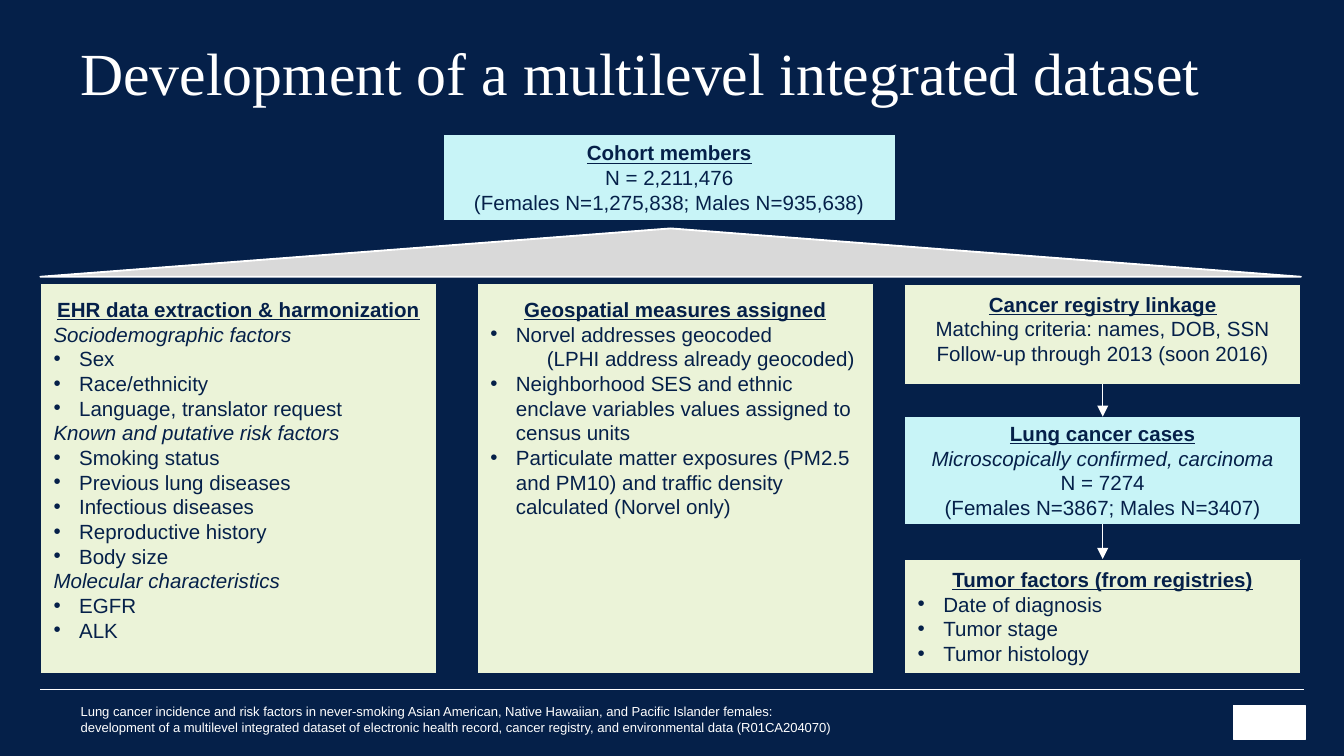
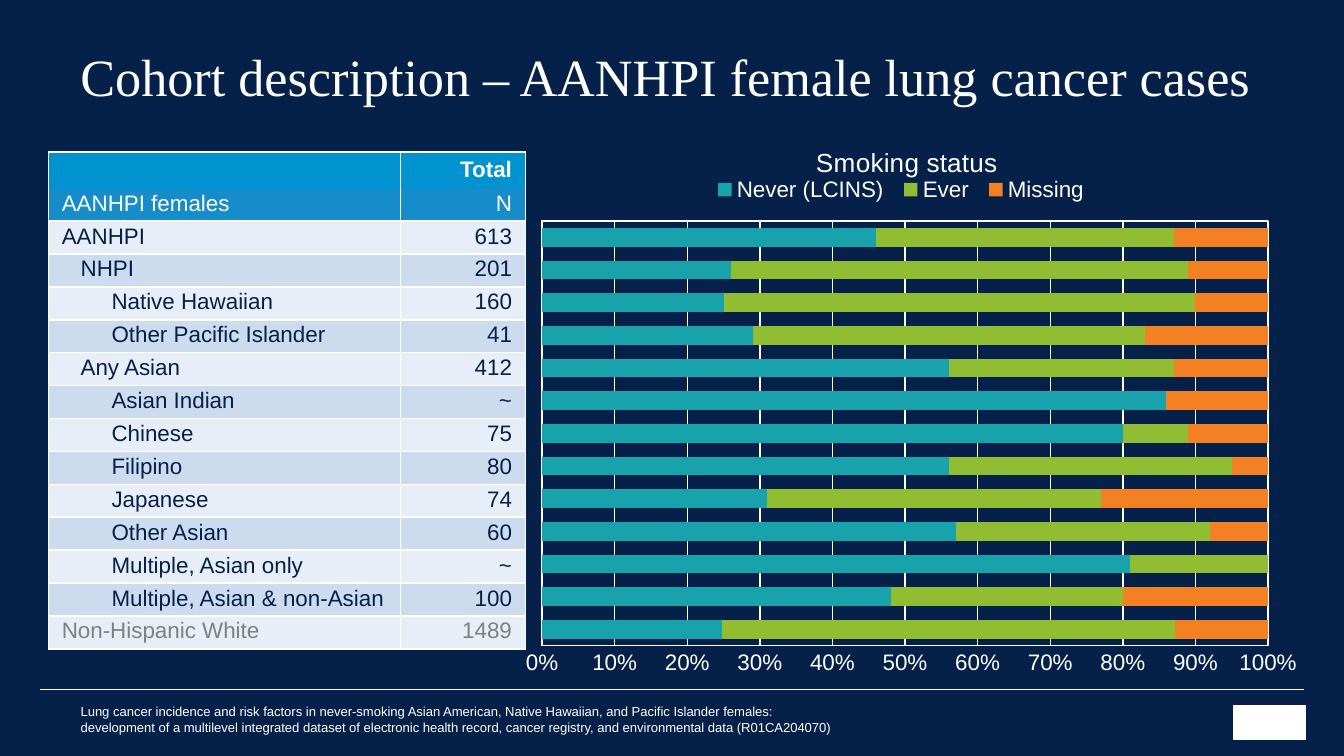
from dataclasses import dataclass, replace
from typing import Any, Optional

from lxml.etree import SubElement
from pptx import Presentation
from pptx.chart.data import CategoryChartData
from pptx.dml.color import RGBColor
from pptx.enum.chart import XL_CHART_TYPE, XL_LEGEND_POSITION, XL_TICK_MARK
from pptx.enum.shapes import MSO_CONNECTOR, MSO_SHAPE
from pptx.enum.text import MSO_ANCHOR, PP_ALIGN
from pptx.oxml import parse_xml
from pptx.oxml.ns import nsdecls, qn
from pptx.util import Inches, Pt

NAVY = RGBColor(0x05, 0x20, 0x49)
WHITE = RGBColor(0xFF, 0xFF, 0xFF)
GRAY = RGBColor(0x80, 0x80, 0x80)
LIGHT_GRAY = RGBColor(0xD9, 0xD9, 0xD9)
PALE_CYAN = RGBColor(0xC8, 0xF4, 0xF7)
PALE_GREEN = RGBColor(0xEB, 0xF3, 0xD8)
HEADER_BLUE = RGBColor(0x00, 0x93, 0xD0)
SUBHEADER_BLUE = RGBColor(0x17, 0x8C, 0xCB)
BANDS = (RGBColor(0xE7, 0xEE, 0xF7), RGBColor(0xCC, 0xDC, 0xEE))
TEAL = RGBColor(0x18, 0xA3, 0xAC)
GREEN = RGBColor(0x90, 0xBD, 0x31)
ORANGE = RGBColor(0xF4, 0x80, 0x24)

SLIDE_WIDTH = Inches(10)
SLIDE_HEIGHT = SLIDE_WIDTH * 9 // 16
FOOTER = (
    "Lung cancer incidence and risk factors in never-smoking Asian American, Native Hawaiian, "
    "and Pacific Islander females: development of a multilevel integrated dataset of electronic "
    "health record, cancer registry, and environmental data (R01CA204070)"
)
BULLET_INDENT = 0.19


@dataclass(frozen=True)
class Line:
    text: str
    size: float = 11
    color: RGBColor = NAVY
    font: str = "Arial"
    bold: bool = False
    italic: bool = False
    underline: bool = False
    align: PP_ALIGN = PP_ALIGN.LEFT
    indent: float = 0
    bullet: bool = False
    spacing: Optional[float] = None


@dataclass(frozen=True)
class Box:
    left: float
    top: float
    width: float
    height: float
    fill: RGBColor
    lines: list[Line]
    anchor: MSO_ANCHOR = MSO_ANCHOR.MIDDLE
    margin_top: float = 0.05


@dataclass(frozen=True)
class Group:
    name: str
    total: str
    indent: float
    smoking: tuple[int, int, int]


def heading(text: str) -> Line:
    return Line(text, bold=True, underline=True, align=PP_ALIGN.CENTER)


def centered(text: str) -> Line:
    return Line(text, align=PP_ALIGN.CENTER)


def subheading(text: str) -> Line:
    return Line(text, italic=True)


def bullets(*texts: str) -> list[Line]:
    return [Line(text, indent=BULLET_INDENT, bullet=True) for text in texts]


COLUMN = {"top": 2.11, "width": 2.95, "height": 2.9, "fill": PALE_GREEN,
          "anchor": MSO_ANCHOR.TOP, "margin_top": 0.1}
COHORT_BOX = Box(3.3, 1, 3.36, 0.64, PALE_CYAN, [
    heading("Cohort members"),
    centered("N = 2,211,476"),
    centered("(Females N=1,275,838; Males N=935,638)"),
])
HEALTH_RECORD_BOX = Box(left=0.3, **COLUMN, lines=[
    heading("EHR data extraction & harmonization"),
    subheading("Sociodemographic factors"),
    *bullets("Sex", "Race/ethnicity", "Language, translator request"),
    subheading("Known and putative risk factors"),
    *bullets("Smoking status", "Previous lung diseases", "Infectious diseases",
             "Reproductive history", "Body size"),
    subheading("Molecular characteristics"),
    *bullets("EGFR", "ALK"),
])
GEOSPATIAL_BOX = Box(left=3.55, **COLUMN, lines=[
    heading("Geospatial measures assigned"),
    *bullets("Norvel addresses geocoded"),
    Line("(LPHI address already geocoded)", indent=0.42),
    *bullets("Neighborhood SES and ethnic enclave variables values assigned to census units",
             "Particulate matter exposures (PM2.5 and PM10) and traffic density calculated "
             "(Norvel only)"),
])
REGISTRY_CHAIN = [
    Box(6.73, 2.12, 2.95, 0.74, PALE_GREEN, [
        heading("Cancer registry linkage"),
        centered("Matching criteria: names, DOB, SSN"),
        centered("Follow-up through 2013 (soon 2016)"),
    ], anchor=MSO_ANCHOR.TOP),
    Box(6.73, 3.1, 2.95, 0.8, PALE_CYAN, [
        heading("Lung cancer cases"),
        replace(centered("Microscopically confirmed, carcinoma"), italic=True),
        centered("N = 7274"),
        centered("(Females N=3867; Males N=3407)"),
    ]),
    Box(6.73, 4.16, 2.95, 0.85, PALE_GREEN, [
        heading("Tumor factors (from registries)"),
        *bullets("Date of diagnosis", "Tumor stage", "Tumor histology"),
    ]),
]

LEVEL_1, LEVEL_2 = 0.14, 0.37
SMOKING_SERIES = {"Never (LCINS)": TEAL, "Ever": GREEN, "Missing": ORANGE}
GROUPS = [
    Group("AANHPI", "613", 0, (46, 41, 13)),
    Group("NHPI", "201", LEVEL_1, (26, 63, 11)),
    Group("Native Hawaiian", "160", LEVEL_2, (25, 65, 10)),
    Group("Other Pacific Islander", "41", LEVEL_2, (29, 54, 17)),
    Group("Any Asian", "412", LEVEL_1, (56, 31, 13)),
    Group("Asian Indian", "~", LEVEL_2, (86, 0, 14)),
    Group("Chinese", "75", LEVEL_2, (80, 9, 11)),
    Group("Filipino", "80", LEVEL_2, (56, 39, 5)),
    Group("Japanese", "74", LEVEL_2, (31, 46, 23)),
    Group("Other Asian", "60", LEVEL_2, (57, 35, 8)),
    Group("Multiple, Asian only", "~", LEVEL_2, (81, 19, 0)),
    Group("Multiple, Asian & non-Asian", "100", LEVEL_2, (48, 32, 20)),
    Group("Non-Hispanic White", "1489", 0, (25, 63, 13)),
]


def set_attributes(target: Any, **values: Any) -> None:
    for name, value in values.items():
        setattr(target, name, value)


def format_font(font: Any, size: float, color: RGBColor, **values: Any) -> None:
    set_attributes(font, size=Pt(size), **{"name": "Arial", **values})
    font.color.rgb = color


def write_lines(frame: Any, lines: list[Line]) -> None:
    for index, line in enumerate(lines):
        paragraph = frame.add_paragraph() if index else frame.paragraphs[0]
        set_attributes(paragraph, alignment=line.align, line_spacing=line.spacing)
        properties = paragraph._p.get_or_add_pPr()
        if line.indent:
            properties.set("marL", str(Inches(line.indent)))
        if line.bullet:
            properties.set("indent", str(-Inches(line.indent)))
            SubElement(properties, qn("a:buFont"), typeface=line.font)
            SubElement(properties, qn("a:buChar"), char="•")
        if line.text:
            run = paragraph.add_run()
            run.text = line.text
            format_font(run.font, line.size, line.color, name=line.font, bold=line.bold,
                        italic=line.italic, underline=line.underline)
        else:
            paragraph._p.get_or_add_endParaRPr().set("sz", str(int(line.size * 100)))


def add_text(slide: Any, left: float, top: float, width: float, height: float,
             line: Line, **margins: int) -> None:
    frame = slide.shapes.add_textbox(*map(Inches, (left, top, width, height))).text_frame
    set_attributes(frame, word_wrap=True, vertical_anchor=MSO_ANCHOR.BOTTOM, **margins)
    write_lines(frame, [line])


def add_filled_shape(slide: Any, kind: MSO_SHAPE, left: float, top: float, width: float,
                     height: float, fill: RGBColor, line: RGBColor, weight: float) -> Any:
    shape = slide.shapes.add_shape(kind, *map(Inches, (left, top, width, height)))
    shape.shadow.inherit = False
    shape.fill.solid()
    shape.fill.fore_color.rgb = fill
    shape.line.color.rgb = line
    shape.line.width = Pt(weight)
    return shape


def add_box(slide: Any, box: Box) -> Any:
    shape = add_filled_shape(slide, MSO_SHAPE.RECTANGLE, box.left, box.top, box.width,
                             box.height, box.fill, NAVY, 0.5)
    set_attributes(shape.text_frame, word_wrap=True, vertical_anchor=box.anchor,
                   margin_top=Inches(box.margin_top))
    write_lines(shape.text_frame, box.lines)
    return shape


def add_line(slide: Any, start: tuple[float, float], end: tuple[float, float],
             weight: float) -> Any:
    connector = slide.shapes.add_connector(MSO_CONNECTOR.STRAIGHT, *map(Inches, start + end))
    connector.line.color.rgb = WHITE
    connector.line.width = Pt(weight)
    SubElement(connector._element.spPr, qn("a:effectLst"))
    return connector


def add_arrow(slide: Any, upper: Any, lower: Any) -> None:
    arrow = add_line(slide, (0, 0), (0, 0), 0.5)
    arrow.begin_connect(upper, 2)
    arrow.end_connect(lower, 0)
    SubElement(arrow.line._get_or_add_ln(), qn("a:tailEnd"), type="triangle")


def add_base_slide(presentation: Any, title: str, title_size: float) -> Any:
    """Add a blank slide with the shared background, title, rule and footer."""
    slide = presentation.slides.add_slide(presentation.slide_layouts[6])
    slide.background.fill.solid()
    slide.background.fill.fore_color.rgb = NAVY
    add_line(slide, (0.3, 5.13), (9.7, 5.13), 0.25)
    add_filled_shape(slide, MSO_SHAPE.RECTANGLE, 9.18, 5.25, 0.53, 0.25, WHITE, WHITE, 0.25)
    add_text(slide, 0.5, 0.35, 8.94, 0.5,
             Line(title, title_size, WHITE, "Times New Roman", spacing=0.85))
    add_text(slide, 0.6, 5.25, 5.67, 0.22, Line(FOOTER, 7, WHITE),
             margin_left=0, margin_top=0, margin_right=0, margin_bottom=0)
    return slide


def add_border(cell: Any, side: str, visible: bool) -> None:
    border = SubElement(cell._tc.get_or_add_tcPr(), qn(f"a:ln{side}"), w=str(Pt(1)))
    if visible:
        fill = SubElement(border, qn("a:solidFill"))
        SubElement(fill, qn("a:srgbClr"), val=str(WHITE))
    else:
        SubElement(border, qn("a:noFill"))


def add_totals_table(slide: Any) -> None:
    rows = [
        (Line("", 12), Line("Total", 12, WHITE, bold=True), HEADER_BLUE),
        (Line("AANHPI females", 12, WHITE), Line("N", 12, WHITE), SUBHEADER_BLUE),
    ]
    for index, group in enumerate(GROUPS):
        color = GRAY if group is GROUPS[-1] else NAVY
        rows.append((Line(group.name, 12, color, indent=group.indent),
                     Line(group.total, 12, color), BANDS[index % 2]))
    height, header_height = Inches(3.7), Inches(0.27)
    table = slide.shapes.add_table(len(rows), 2, Inches(0.36), Inches(1.13),
                                   Inches(3.55), height).table
    for column, width in zip(table.columns, (2.62, 0.93)):
        column.width = Inches(width)
    for index, (name, total, fill) in enumerate(rows):
        table.rows[index].height = (
            (height - header_height) // (len(rows) - 1) if index else header_height)
        for column, line in enumerate((name, replace(total, align=PP_ALIGN.RIGHT))):
            cell = table.cell(index, column)
            set_attributes(cell, margin_top=Inches(0.02), margin_bottom=Inches(0.02),
                           vertical_anchor=MSO_ANCHOR.TOP if index else MSO_ANCHOR.MIDDLE)
            for side in "LRTB":
                add_border(cell, side, (index, side) not in ((0, "B"), (1, "T")))
            cell.fill.solid()
            cell.fill.fore_color.rgb = fill
            write_lines(cell.text_frame, [line])


def set_layout(element: Any, index: int, target: str = "", **fractions: float) -> None:
    """Place a chart part by fractions of the chart area; index is its layout's child slot."""
    for layout in element.findall(qn("c:layout")):
        element.remove(layout)
    inner = f'<c:layoutTarget val="{target}"/>' if target else ""
    modes = "".join(f'<c:{name}Mode val="edge"/>' for name in ("x", "y"))
    values = "".join(f'<c:{name} val="{value}"/>' for name, value in fractions.items())
    element.insert(index, parse_xml(
        f'<c:layout {nsdecls("c")}><c:manualLayout>{inner}{modes}{values}'
        "</c:manualLayout></c:layout>"))


def add_smoking_chart(slide: Any) -> None:
    data = CategoryChartData()
    data.categories = [str(number + 1) for number in range(len(GROUPS))]
    for index, name in enumerate(SMOKING_SERIES):
        data.add_series(name, [group.smoking[index] for group in reversed(GROUPS)])
    chart = slide.shapes.add_chart(XL_CHART_TYPE.BAR_STACKED_100, Inches(3.73), Inches(0.92),
                                   Inches(6.07), Inches(4.27), data).chart
    format_font(chart.font, 10, WHITE)
    title = chart.chart_title.text_frame
    title.text = "Smoking status"
    format_font(title.paragraphs[0].runs[0].font, 14, WHITE, bold=False)
    set_layout(chart.chart_title._element, 1, x=0.38, y=0.03)
    chart.has_legend = True
    set_attributes(chart.legend, position=XL_LEGEND_POSITION.TOP, include_in_layout=False)
    format_font(chart.legend.font, 12, WHITE)
    set_layout(chart.legend._element, 1, x=0.25, y=0.08, w=0.48, h=0.07)

    plot = chart.plots[0]
    set_attributes(plot, gap_width=75, overlap=100, vary_by_categories=False)
    for series, color in zip(plot.series, SMOKING_SERIES.values()):
        series.format.fill.solid()
        series.format.fill.fore_color.rgb = color
    chart.category_axis.visible = False
    axis = chart.value_axis
    set_attributes(axis, major_unit=0.1, major_tick_mark=XL_TICK_MARK.NONE,
                   minor_tick_mark=XL_TICK_MARK.NONE, has_major_gridlines=True)
    set_attributes(axis.tick_labels, number_format="0%", number_format_is_linked=False)
    format_font(axis.tick_labels.font, 12, WHITE)
    axis.format.line.fill.background()
    axis.major_gridlines.format.line.color.rgb = WHITE
    axis.major_gridlines.format.line.width = Pt(0.75)
    plot_area = chart._chartSpace.chart.plotArea
    set_layout(plot_area, 0, "inner", x=0.05, y=0.17, w=0.89, h=0.74)
    plot_area.append(parse_xml(
        f'<c:spPr {nsdecls("c", "a")}><a:noFill/><a:ln w="{Pt(0.75)}"><a:solidFill>'
        f'<a:srgbClr val="{WHITE}"/></a:solidFill></a:ln></c:spPr>'))


def build_dataset_slide(presentation: Any) -> None:
    slide = add_base_slide(presentation, "Development of a multilevel integrated dataset", 32)
    for box in (COHORT_BOX, HEALTH_RECORD_BOX, GEOSPATIAL_BOX):
        add_box(slide, box)
    chain = [add_box(slide, box) for box in REGISTRY_CHAIN]
    for upper, lower in zip(chain, chain[1:]):
        add_arrow(slide, upper, lower)
    add_filled_shape(slide, MSO_SHAPE.ISOSCELES_TRIANGLE, 0.3, 1.7, 9.38, 0.36,
                     LIGHT_GRAY, WHITE, 1)


def build_cohort_slide(presentation: Any) -> None:
    slide = add_base_slide(presentation, "Cohort description – AANHPI female lung cancer cases", 28)
    add_totals_table(slide)
    add_smoking_chart(slide)


def main() -> None:
    presentation = Presentation()
    set_attributes(presentation, slide_width=SLIDE_WIDTH, slide_height=SLIDE_HEIGHT)
    build_dataset_slide(presentation)
    build_cohort_slide(presentation)
    presentation.save("out.pptx")


if __name__ == "__main__":
    main()
